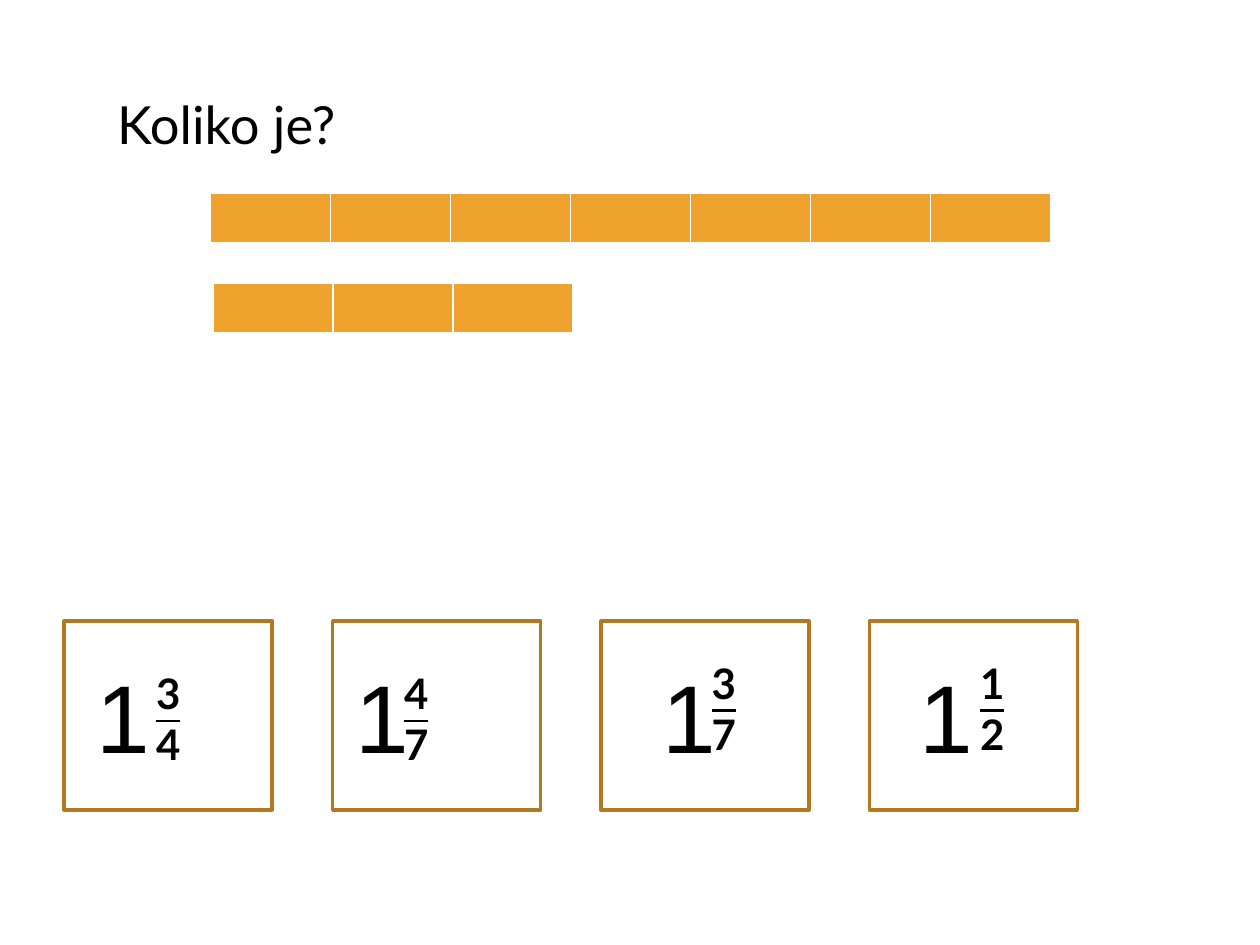
from lxml import etree
from pptx import Presentation
from pptx.dml.color import RGBColor
from pptx.enum.shapes import MSO_SHAPE as Shape
from pptx.enum.text import MSO_ANCHOR as Anchor, MSO_AUTO_SIZE as AutoSize, PP_ALIGN as Align
from pptx.oxml.ns import qn
from pptx.util import Inches, Pt

BLACK = RGBColor(0x00, 0x00, 0x00)
WHITE = RGBColor(0xFF, 0xFF, 0xFF)
ORANGE = RGBColor(0xF0, 0xA2, 0x2E)
BROWN = RGBColor(0xB2, 0x78, 0x22)

PARTS = 7
PART_WIDTH = 6.67 / PARTS
BORDERS = {"a:lnL": 1, "a:lnR": 1, "a:lnT": 1, "a:lnB": 3}


def write_line(paragraph, text, size, font="Lato", bold=False, underline=False):
    paragraph.alignment = Align.LEFT
    run = paragraph.add_run()
    run.text = text
    run.font.name = font
    run.font.size = Pt(size)
    run.font.bold = bold
    run.font.underline = underline
    run.font.color.rgb = BLACK


def add_box(slide, left, top, width, height):
    box = slide.shapes.add_textbox(Inches(left), Inches(top), Inches(width), Inches(height))
    box.text_frame.word_wrap = True
    return box.text_frame


def add_title(slide, text):
    title = slide.shapes.title
    title.left, title.top = Inches(0.83), Inches(0.68)
    title.width, title.height = Inches(5.67), Inches(0.61)
    frame = title.text_frame
    frame.auto_size = AutoSize.NONE
    frame.vertical_anchor = Anchor.TOP
    write_line(frame.paragraphs[0], text, 30)


def set_borders(cell):
    properties = cell._tc.get_or_add_tcPr()
    for tag, width in BORDERS.items():
        border = etree.SubElement(properties, qn(tag), w=str(Pt(width)))
        fill = etree.SubElement(border, qn("a:solidFill"))
        etree.SubElement(fill, qn("a:srgbClr"), val=str(WHITE))


def add_fraction_bar(slide, left, top, height, filled):
    bar = slide.shapes.add_table(
        1, PARTS, Inches(left), Inches(top), Inches(PART_WIDTH * PARTS), Inches(height)
    ).table
    bar.first_row = bar.horz_banding = False
    for column in bar.columns:
        column.width = Inches(PART_WIDTH)
    for index, cell in enumerate(bar.rows[0].cells):
        set_borders(cell)
        if index < filled:
            cell.fill.solid()
            cell.fill.fore_color.rgb = ORANGE
        else:
            cell.fill.background()


def add_mixed_number(slide, whole_left, fraction_left, fraction_top, numerator, denominator):
    whole = add_box(slide, whole_left, 5.17, 0.71, 1.03)
    write_line(whole.paragraphs[0], "1", 55, font="Arial")
    fraction = add_box(slide, fraction_left, fraction_top, 0.63, 0.91)
    write_line(fraction.paragraphs[0], numerator, 24, bold=True, underline=True)
    write_line(fraction.add_paragraph(), denominator, 24, bold=True)


def add_answer_button(slide, left):
    button = slide.shapes.add_shape(
        Shape.ACTION_BUTTON_CUSTOM, Inches(left), Inches(4.93), Inches(1.65), Inches(1.5)
    )
    button.shadow.inherit = False
    button.fill.background()
    button.line.color.rgb = BROWN
    button.line.width = Pt(2)


def main():
    deck = Presentation()
    deck.slide_width, deck.slide_height = Inches(10), Inches(7.5)
    slide = deck.slides.add_slide(deck.slide_layouts[5])
    add_title(slide, "Koliko je?")
    add_fraction_bar(slide, 1.67, 1.53, 0.41, filled=7)
    add_fraction_bar(slide, 1.69, 2.25, 0.38, filled=3)

    answers = [
        (0.67, 1.14, 5.25, "3", "4"),
        (2.72, 3.11, 5.25, "4", "7"),
        (5.16, 5.55, 5.17, "3", "7"),
        (7.2, 7.68, 5.17, "1", "2"),
    ]
    for index, answer in enumerate(answers):
        add_mixed_number(slide, *answer)
        add_answer_button(slide, 0.51 + index * 2.13)
    deck.save("out.pptx")


if __name__ == "__main__":
    main()
